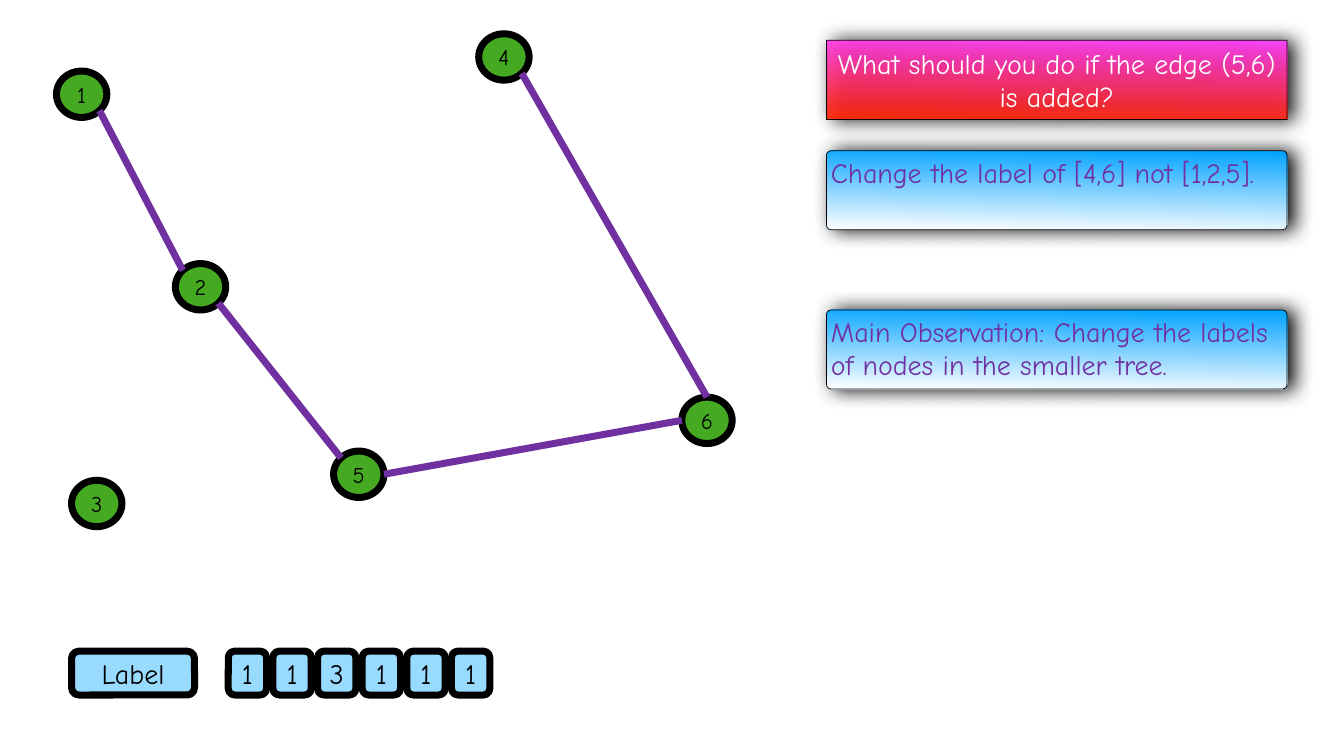
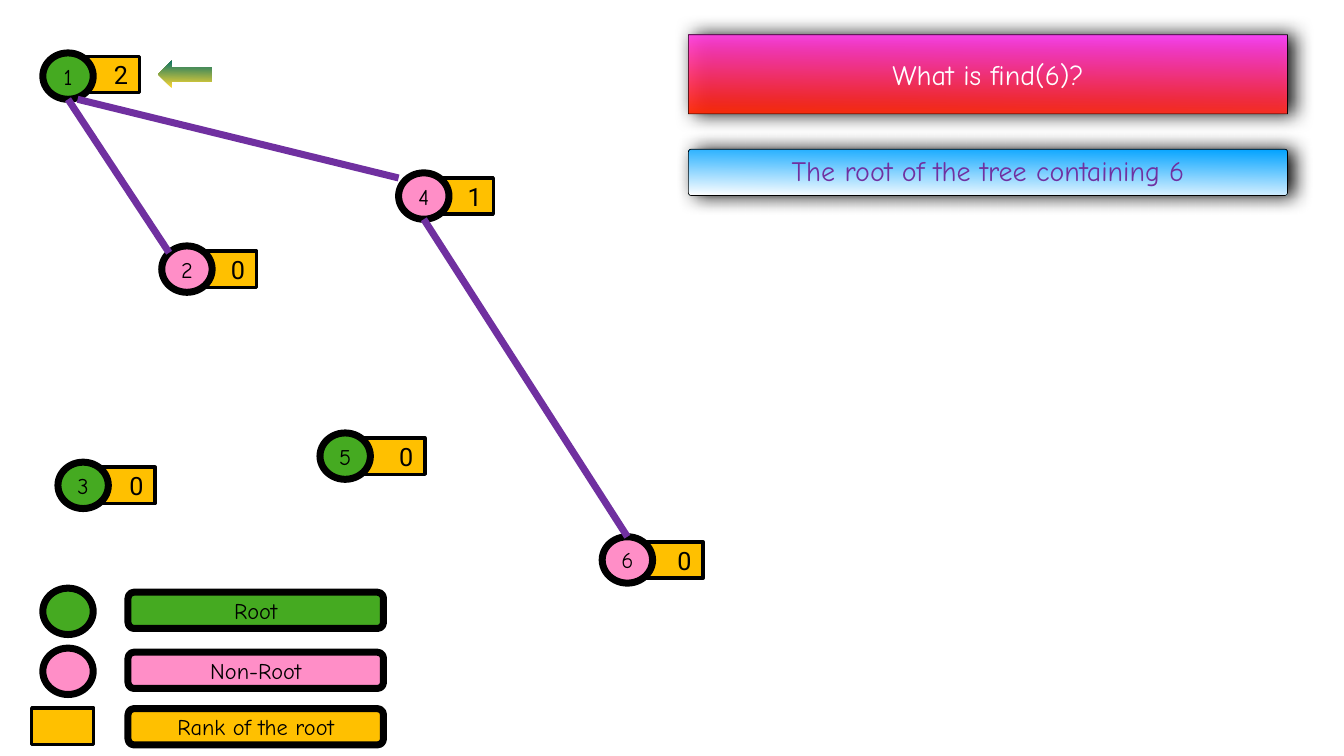
"""Build two slides about union-find trees: relabelling nodes and finding a root."""

import dataclasses
import typing

import lxml.etree
import pptx
import pptx.dml.color
import pptx.dml.fill
import pptx.enum.shapes
import pptx.enum.text
import pptx.oxml.ns
import pptx.shapes.autoshape
import pptx.slide
import pptx.util

Inches = pptx.util.Inches
Kind = pptx.enum.shapes.MSO_SHAPE
Align = pptx.enum.text.PP_ALIGN
Anchor = pptx.enum.text.MSO_ANCHOR

COLORS = {
    "black": "000000",
    "white": "FFFFFF",
    "root": "45AA21",
    "child": "FF8EC7",
    "rank": "FFC000",
    "label": "99DAFF",
    "edge": "7030A0",
    "question_top": "FF40FF",
    "question_bottom": "FF2600",
    "answer_top": "00A2FF",
    "arrow_start": "FFD932",
    "arrow_end": "0B7468",
}
HAND_FONT = "Comic Neue"
RANK_FONT = "Roboto"
NODE_SIZE = (1, 0.92)
RANK_SIZE = (1.23, 0.72)
KEY_SIZE = (5.07, 0.72)
DIAGONAL = 0.5 * 0.5 ** 0.5
SITES = {
    "top": (0.5, 0),
    "bottom": (0.5, 1),
    "left": (0, 0.5),
    "right": (1, 0.5),
    "top left": (0.5 - DIAGONAL, 0.5 - DIAGONAL),
    "bottom right": (0.5 + DIAGONAL, 0.5 + DIAGONAL),
    "upper left side": (0, 0.11),
    "right of bottom": (0.69, 1),
}


class Box(typing.NamedTuple):
    """Position and size in inches."""

    left: float
    top: float
    width: float
    height: float


@dataclasses.dataclass(frozen=True)
class Node:
    """A numbered tree node, with an optional rank tag offset from it."""

    name: str
    left: float
    top: float
    color: str = "root"
    rank: str = ""
    rank_right: float = 0
    rank_down: float = 0.1


class Edge(typing.NamedTuple):
    """A line between named sites of two nodes."""

    start: str
    start_site: str
    end: str
    end_site: str


class Key(typing.NamedTuple):
    """A legend row with a sample shape and its meaning."""

    text: str
    color: str
    sample: Box
    kind: Kind
    line_width: float
    top: float


LABEL_NODES = [
    Node("4", 9.5, 0.67),
    Node("2", 3.48, 5.23),
    Node("3", 1.42, 9.53),
    Node("5", 6.62, 8.95),
    Node("6", 13.53, 7.88),
    Node("1", 1.12, 1.41),
]
LABEL_EDGES = [
    Edge("2", "top left", "1", "bottom right"),
    Edge("5", "top left", "2", "bottom right"),
    Edge("6", "top", "4", "bottom right"),
    Edge("6", "left", "5", "right"),
]
RANK_NODES = [
    Node("4", 7.91, 3.43, "child", "1", 0.65),
    Node("2", 3.21, 4.88, "child", "0", 0.65),
    Node("3", 1.15, 9.17, "root", "0", 0.7),
    Node("5", 6.35, 8.59, "root", "0", 0.85),
    Node("6", 11.95, 10.65, "child", "0", 0.77),
    Node("1", 0.85, 1.05, "root", "2", 0.69, 0.07),
]
RANK_EDGES = [
    Edge("6", "top", "4", "bottom"),
    Edge("2", "top left", "1", "bottom"),
    Edge("4", "upper left side", "1", "right of bottom"),
]
KEYS = [
    Key("Root", "root", Box(0.85, 11.67, *NODE_SIZE), Kind.OVAL, 10, 11.75),
    Key("Non-Root", "child", Box(0.85, 12.86, *NODE_SIZE), Kind.OVAL, 10, 12.94),
    Key("Rank of the root", "rank", Box(0.63, 14.05, *RANK_SIZE), Kind.RECTANGLE, 5, 14.06),
]


def rgb(name: str) -> pptx.dml.color.RGBColor:
    """Return a palette colour."""
    return pptx.dml.color.RGBColor.from_string(COLORS[name])


def write_text(
    shape: pptx.shapes.autoshape.Shape,
    text: str,
    *,
    size: float = 32,
    font: str = HAND_FONT,
    color: str = "black",
    align: Align = Align.CENTER,
    anchor: Anchor = Anchor.MIDDLE,
    left_inset: float = 0.06,
) -> None:
    """Put one formatted paragraph into a shape."""
    frame = shape.text_frame
    frame.word_wrap = True
    frame.auto_size = pptx.enum.text.MSO_AUTO_SIZE.NONE
    frame.vertical_anchor = anchor
    frame.margin_left = Inches(left_inset)
    frame.margin_top = frame.margin_right = frame.margin_bottom = Inches(0.06)
    paragraph = frame.paragraphs[0]
    paragraph.alignment = align
    run = paragraph.add_run()
    run.text = text
    run.font.size = pptx.util.Pt(size)
    run.font.name = font
    run.font.color.rgb = rgb(color)


def add_block(
    slide: pptx.slide.Slide, kind: Kind, box: Box, color: str, line_width: float = 10
) -> pptx.shapes.autoshape.Shape:
    """Add a solid shape with a black outline."""
    shape = slide.shapes.add_shape(kind, *map(Inches, box))
    shape.shadow.inherit = False
    shape.fill.solid()
    shape.fill.fore_color.rgb = rgb(color)
    shape.line.color.rgb = rgb("black")
    shape.line.width = pptx.util.Pt(line_width)
    return shape


def fill_gradient(fill: pptx.dml.fill.FillFormat, start: str, end: str) -> None:
    """Fill with two colours running downwards."""
    fill.gradient()
    fill.gradient_angle = 269
    for stop, color, position in zip(fill.gradient_stops, (start, end), (0, 1)):
        stop.color.rgb = rgb(color)
        stop.position = position


def style_panel(
    shape: pptx.shapes.autoshape.Shape, start: str, end: str, opacity: int = 100
) -> None:
    """Give a panel its gradient, thin outline and soft shadow."""
    qn = pptx.oxml.ns.qn
    fill_gradient(shape.fill, start, end)
    shape.line.color.rgb = rgb("black")
    shape.line.width = pptx.util.Pt(1)
    properties = shape.element.spPr
    if opacity < 100:
        for color in list(properties.iter(qn("a:srgbClr"))):
            lxml.etree.SubElement(color, qn("a:alpha"), val=str(opacity * 1000))
    shape.shadow.inherit = False
    shadow = lxml.etree.SubElement(
        properties.find(qn("a:effectLst")),
        qn("a:outerShdw"),
        blurRad=str(pptx.util.Pt(28)),
        dist=str(pptx.util.Pt(9)),
        dir="0",
        rotWithShape="0",
    )
    color = lxml.etree.SubElement(shadow, qn("a:srgbClr"), val=COLORS["black"])
    lxml.etree.SubElement(color, qn("a:alpha"), val="97000")


def add_question_slide(
    presentation: pptx.presentation.Presentation, text: str, box: Box
) -> pptx.slide.Slide:
    """Add a slide whose title is the question panel."""
    slide = presentation.slides.add_slide(presentation.slide_layouts[5])
    title = slide.shapes.title
    title.left, title.top, title.width, title.height = map(Inches, box)
    style_panel(title, "question_top", "question_bottom", opacity=93)
    write_text(title, text, size=40, color="white")
    return slide


def add_answer(
    slide: pptx.slide.Slide, text: str, box: Box, align: Align = Align.LEFT
) -> None:
    """Add a blue answer panel."""
    panel = slide.shapes.add_shape(Kind.ROUNDED_RECTANGLE, *map(Inches, box))
    panel.adjustments[0] = 0.06
    style_panel(panel, "answer_top", "white")
    write_text(panel, text, size=40, color="edge", align=align, anchor=Anchor.TOP)


def site_point(node: Node, site: str) -> tuple[int, int]:
    """Return the place of a named site on a node."""
    across, down = SITES[site]
    width, height = NODE_SIZE
    return Inches(node.left + across * width), Inches(node.top + down * height)


def add_tree(slide: pptx.slide.Slide, nodes: list[Node], edges: list[Edge]) -> None:
    """Draw rank tags, then nodes, then edges."""
    for node in nodes:
        if node.rank:
            box = Box(node.left + node.rank_right, node.top + node.rank_down, *RANK_SIZE)
            tag = add_block(slide, Kind.RECTANGLE, box, "rank", 5)
            write_text(tag, node.rank, size=36, font=RANK_FONT, left_inset=0.55)
    for node in nodes:
        circle = add_block(slide, Kind.OVAL, Box(node.left, node.top, *NODE_SIZE), node.color)
        write_text(circle, node.name)
    by_name = {node.name: node for node in nodes}
    for edge in edges:
        connector = slide.shapes.add_connector(
            pptx.enum.shapes.MSO_CONNECTOR.STRAIGHT,
            *site_point(by_name[edge.start], edge.start_site),
            *site_point(by_name[edge.end], edge.end_site),
        )
        connector.line.color.rgb = rgb("edge")
        connector.line.width = pptx.util.Pt(10)
        lxml.etree.SubElement(connector.element.spPr, pptx.oxml.ns.qn("a:effectLst"))


def build_label_slide(presentation: pptx.presentation.Presentation) -> None:
    """Build the slide on relabelling the smaller tree."""
    question = Box(16.4, 0.8, 9.14, 1.57)
    slide = add_question_slide(
        presentation, "What should you do if the edge (5,6) is added?", question
    )
    add_answer(slide, "Change the label of [4,6] not [1,2,5].", question._replace(top=2.99))
    add_answer(
        slide,
        "Main Observation: Change the labels of nodes in the smaller tree.",
        question._replace(top=6.15),
    )
    add_tree(slide, LABEL_NODES, LABEL_EDGES)
    first_cell, last_cell, labels = 4.53, 8.96, "113111"
    pitch = (last_cell - first_cell) / (len(labels) - 1)
    cells = [("Label", 1.42, 2.44)]
    cells += [(label, first_cell + i * pitch, 0.76) for i, label in enumerate(labels)]
    for text, left, width in cells:
        cell = add_block(slide, Kind.ROUNDED_RECTANGLE, Box(left, 12.92, width, 0.87), "label")
        write_text(cell, text, size=40)


def build_rank_slide(presentation: pptx.presentation.Presentation) -> None:
    """Build the slide on finding the root of a ranked tree."""
    question = Box(13.66, 0.69, 11.89, 1.57)
    slide = add_question_slide(presentation, "What is find(6)?", question)
    answer = question._replace(top=2.96, height=0.92)
    add_answer(slide, "The root of the tree containing 6", answer, Align.CENTER)
    add_tree(slide, RANK_NODES, RANK_EDGES)
    for key in KEYS:
        add_block(slide, key.kind, key.sample, key.color, key.line_width)
        bar = add_block(slide, Kind.ROUNDED_RECTANGLE, Box(2.54, key.top, *KEY_SIZE), key.color)
        write_text(bar, key.text)
    arrow = slide.shapes.add_shape(Kind.RIGHT_ARROW, *map(Inches, Box(3.14, 1.21, 1.07, 0.53)))
    arrow.rotation = 180
    arrow.shadow.inherit = False
    fill_gradient(arrow.fill, "arrow_start", "arrow_end")
    arrow.line.fill.background()


def main() -> None:
    """Build and save the presentation."""
    presentation = pptx.Presentation()
    presentation.slide_width, presentation.slide_height = Inches(26.67), Inches(15)
    build_label_slide(presentation)
    build_rank_slide(presentation)
    presentation.save("out.pptx")


if __name__ == "__main__":
    main()
